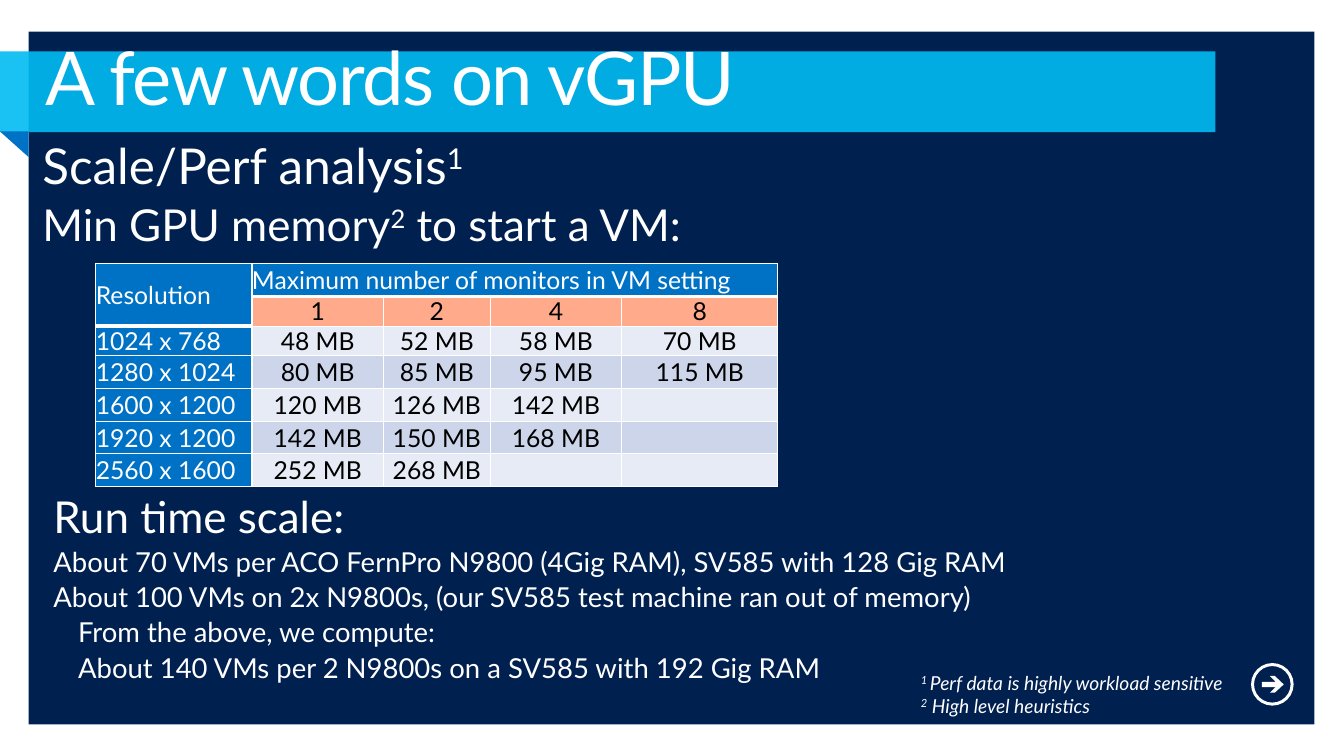
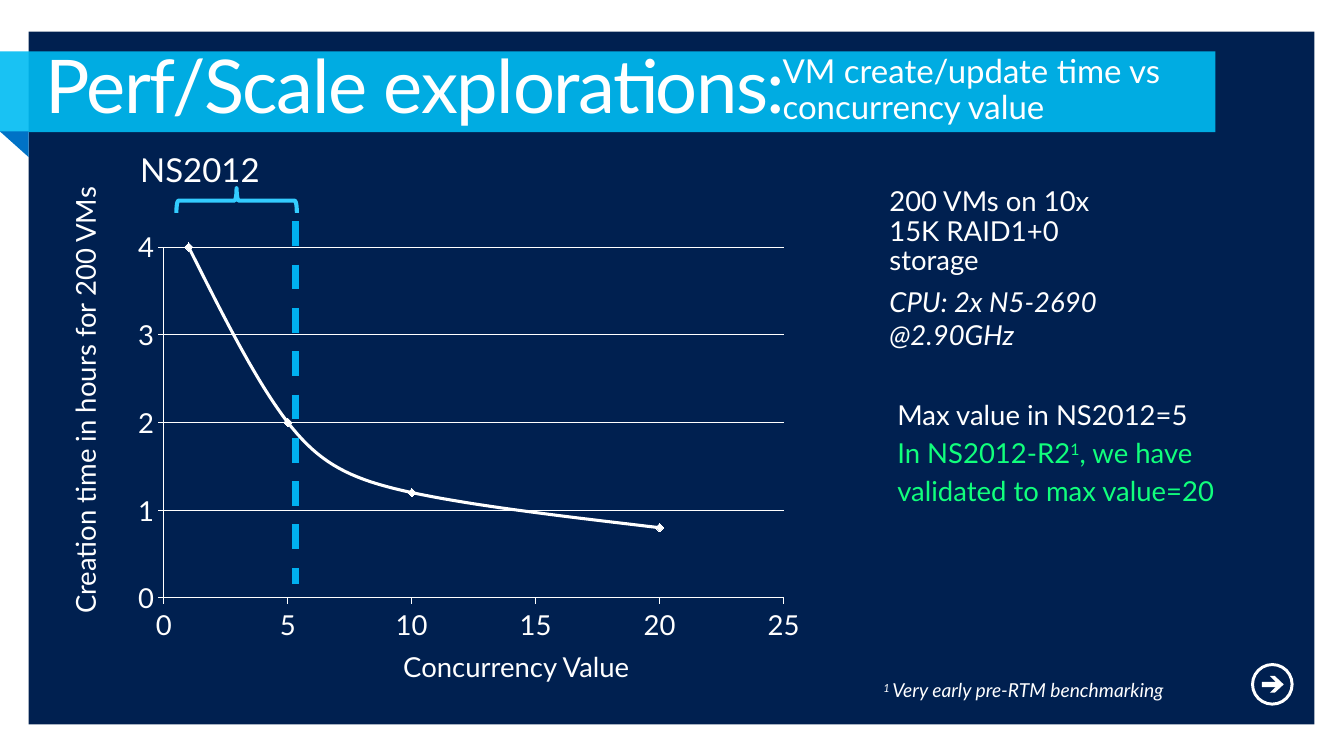
from dataclasses import dataclass

from lxml import etree
from pptx import Presentation
from pptx import util as u
from pptx.chart import data as chart_data
from pptx.dml.color import RGBColor
from pptx.enum import chart as charts, dml, shapes, text
from pptx.oxml import ns, parse_xml

Pt = u.Pt
KIND = shapes.MSO_SHAPE
MAIN = ns.nsdecls("a")


@dataclass(frozen=True)
class Theme:
    font: str = "Lato"
    navy: str = "002050"
    white: str = "FFFFFF"
    black: str = "000000"
    band: str = "00BCF2"
    blue: str = "0072C6"
    salmon: str = "FFAB8B"
    stripes: tuple = ("E7EBF5", "CCD5EA")
    dash: str = "00B0F0"
    brace: str = "33CCFF"
    green: str = "11FF7C"
    title: float = 54
    lead: float = 36
    head: float = 32
    label: float = 24
    body: float = 20
    cell: float = 18
    note: float = 14


THEME = Theme()
BODY_INSETS = (11.5, 7.2)
LABEL_INSETS = (14.4, 11.5)
NOTE_INSETS = (7.2, 3.6)
LABEL = {"line_spacing": 0.9, "space_after": Pt(6)}


def bullet(size):
    return {"line_spacing": 0.9, "space_before": Pt(size * 0.2)}


def apply(target, values):
    for name, value in values.items():
        setattr(target, name, value)


def rgb(color):
    return RGBColor.from_string(color)


class Deck:
    def __init__(self, theme):
        self.theme = theme
        self.presentation = Presentation()
        apply(self.presentation, {"slide_width": Pt(979.2), "slide_height": Pt(550.8)})
        self.slide = None

    def add_slide(self, title, title_top):
        theme = self.theme
        self.slide = self.presentation.slides.add_slide(self.presentation.slide_layouts[6])
        background = self.slide.background.fill
        background.solid()
        background.fore_color.rgb = rgb(theme.navy)
        frame = self.shape(KIND.FRAME, (0, 0, 979.2, 550.8), theme.white)
        frame.adjustments[0] = 0.038
        for box in ((18.7, 527.8, 949.7, 7.9), (14.4, 15.1, 949.7, 7.9), (957.6, 15.1, 6.5, 520.6)):
            self.shape(KIND.RECTANGLE, box, theme.white)
        band = self.shape(KIND.RECTANGLE, (0, 37.4, 885.6, 59), theme.band)
        color = band._element.spPr.find(".//" + ns.qn("a:srgbClr"))
        etree.SubElement(color, ns.qn("a:alpha"), val="90000")
        self.shape(KIND.RIGHT_TRIANGLE, (0, 95.8, 20.9, 18.7), theme.blue, rotation=180)
        self.next_icon()
        runs = self.text((21.6, title_top, 936, 72), [(title, {"line_spacing": 0.9})],
                         theme.title, BODY_INSETS)
        runs[0]._r.get_or_add_rPr().set("spc", "-100")

    def next_icon(self):
        ring = self.shape(KIND.DONUT, (911.5, 483.1, 31, 31), self.theme.white)
        ring.adjustments[0] = 0.07
        points = [(929.5, 496.8), (925.2, 492.5), (928.8, 492.5), (935.3, 498.7), (928.8, 504.7),
                  (925.2, 504.7), (929.5, 500.6), (919.4, 500.6), (919.4, 496.8)]
        corners = [(Pt(x), Pt(y)) for x, y in points]
        builder = self.slide.shapes.build_freeform(*corners[0])
        builder.add_line_segments(corners[1:], close=True)
        self.paint(builder.convert_to_shape(), self.theme.white)

    def paint(self, shape, fill=None, line=None, width=0):
        shape.shadow.inherit = False
        if fill:
            shape.fill.solid()
            shape.fill.fore_color.rgb = rgb(fill)
        else:
            shape.fill.background()
        if line:
            self.stroke(shape.line, line, width)
        else:
            shape.line.fill.background()

    def stroke(self, line, color, width):
        line.color.rgb = rgb(color)
        line.width = Pt(width)

    def shape(self, kind, box, fill=None, line=None, width=0, rotation=0):
        shape = self.slide.shapes.add_shape(kind, *map(Pt, box))
        shape.rotation = rotation
        self.paint(shape, fill, line, width)
        return shape

    def dashed_line(self, start, end, color, width):
        line = self.slide.shapes.add_connector(
            shapes.MSO_CONNECTOR.STRAIGHT, *map(Pt, start + end))
        self.stroke(line.line, color, width)
        line.line.dash_style = dml.MSO_LINE.DASH
        etree.SubElement(line._element.spPr, ns.qn("a:effectLst"))

    def add_runs(self, paragraph, content, size, color=None, italic=False):
        runs = []
        for index, part in enumerate(content.split("^")):
            if not part:
                continue
            run = paragraph.add_run()
            run.text = part
            apply(run.font, {"name": self.theme.font, "size": Pt(size), "italic": italic})
            run.font.color.rgb = rgb(color or self.theme.white)
            if index % 2:
                run._r.get_or_add_rPr().set("baseline", "30000")
            runs.append(run)
        return runs

    def text(self, box, lines, size, insets, rotation=0):
        shape = self.slide.shapes.add_textbox(*map(Pt, box))
        shape.rotation = rotation
        frame = shape.text_frame
        side, edge = map(Pt, insets)
        apply(frame, {"word_wrap": True, "margin_left": side, "margin_right": side,
                      "margin_top": edge, "margin_bottom": edge,
                      "vertical_anchor": text.MSO_ANCHOR.TOP})
        runs = []
        for index, (content, spacing, *rest) in enumerate(lines):
            style = {"size": size, **(rest[0] if rest else {})}
            paragraph = frame.add_paragraph() if index else frame.paragraphs[0]
            apply(paragraph, spacing)
            indent = style.pop("indent", 0)
            if indent:
                paragraph._p.get_or_add_pPr().set("marL", str(Pt(indent)))
            runs += self.add_runs(paragraph, content, **style)
        return runs

    def label(self, box, content, size, rotation=0):
        self.text(box, [(content, LABEL)], size, LABEL_INSETS, rotation)

    def footnote(self, box, *notes):
        lines = [(note, {}, {"italic": True}) for note in notes]
        self.text(box, lines, self.theme.note, NOTE_INSETS)

    def cell_borders(self, cell, thick):
        properties = cell._tc.get_or_add_tcPr()
        for index, side in enumerate("LRTB"):
            width = Pt(3 if side in thick else 1)
            properties.insert(index, parse_xml(
                f'<a:ln{side} {MAIN} w="{width}"><a:solidFill>'
                f'<a:srgbClr val="{self.theme.white}"/></a:solidFill></a:ln{side}>'))

    def memory_table(self, corner, columns, heights, rows):
        theme = self.theme
        table = self.slide.shapes.add_table(
            len(rows), len(columns), *map(Pt, corner + (sum(columns), sum(heights)))).table
        for column, width in zip(table.columns, columns):
            column.width = Pt(width)
        for row, height in zip(table.rows, heights):
            row.height = Pt(height)
        for r, values in enumerate(rows):
            for c, value in enumerate(values):
                cell = table.cell(r, c)
                header = r == 0 or c == 0
                fill = theme.blue if header else theme.salmon if r == 1 else theme.stripes[r % 2]
                cell.fill.solid()
                cell.fill.fore_color.rgb = rgb(fill)
                apply(cell, {"margin_left": 0, "margin_right": 0, "margin_top": 0,
                             "margin_bottom": 0, "vertical_anchor": text.MSO_ANCHOR.MIDDLE})
                paragraph = cell.text_frame.paragraphs[0]
                paragraph.font.size = Pt(theme.cell)
                paragraph.alignment = text.PP_ALIGN.LEFT if header else text.PP_ALIGN.CENTER
                self.add_runs(paragraph, value, theme.cell, theme.white if header else theme.black)
                last_header_row = 1 if c == 0 else 0
                thick = "B" if r <= last_header_row else "T" if r == last_header_row + 1 else ""
                self.cell_borders(cell, thick)
        table.cell(0, 0).merge(table.cell(1, 0))
        table.cell(0, 1).merge(table.cell(0, len(columns) - 1))

    def scatter(self, box, points, plot):
        theme = self.theme
        data = chart_data.XyChartData()
        entries = data.add_series("Series 1")
        for point in points:
            entries.add_data_point(*point)
        chart = self.slide.shapes.add_chart(
            charts.XL_CHART_TYPE.XY_SCATTER_SMOOTH, *map(Pt, box), data).chart
        apply(chart, {"has_legend": False, "has_title": False})
        apply(chart.font, {"name": theme.font, "size": Pt(theme.body)})
        chart.font.color.rgb = rgb(theme.white)
        chart.plots[0].vary_by_categories = False
        for axis, top, step, grid in ((chart.category_axis, 25, 5, False),
                                      (chart.value_axis, 4, 1, True)):
            apply(axis, {"minimum_scale": 0, "maximum_scale": top, "major_unit": step,
                         "has_major_gridlines": grid, "has_title": False,
                         "major_tick_mark": charts.XL_TICK_MARK.OUTSIDE})
            apply(axis.tick_labels, {"number_format": "General", "number_format_is_linked": False})
            self.stroke(axis.format.line, theme.white, 0.75)
        self.stroke(chart.value_axis.major_gridlines.format.line, theme.white, 0.75)
        series = chart.plots[0].series[0]
        series._element.get_or_add_smooth().val = True
        self.stroke(series.format.line, theme.white, 2.25)
        apply(series.marker, {"style": charts.XL_MARKER_STYLE.DIAMOND, "size": 6})
        series.marker.format.fill.solid()
        series.marker.format.fill.fore_color.rgb = rgb(theme.white)
        self.stroke(series.marker.format.line, theme.white, 0.75)
        area = chart._chartSpace.chart.plotArea
        for old in area.findall(ns.qn("c:layout")):
            area.remove(old)
        values = {"layoutTarget": "inner", "xMode": "edge", "yMode": "edge",
                  **dict(zip("xywh", plot))}
        layout = "".join(f'<c:{name} val="{value}"/>' for name, value in values.items())
        area.insert(0, parse_xml(f'<c:layout {ns.nsdecls("c")}><c:manualLayout>{layout}'
                                 '</c:manualLayout></c:layout>'))


def memory_slide(deck):
    theme = deck.theme
    deck.add_slide("A few words on vGPU", 23)
    deck.text((19.4, 95.8, 908.6, 96.5), [
        ("Scale/Perf analysis^1^", bullet(theme.lead), {"size": theme.lead}),
        ("Min GPU memory^2^ to start a VM:", bullet(theme.head)),
    ], theme.head, BODY_INSETS)
    deck.memory_table((69.8, 192.2), (113.8, 95.8, 77.8, 95.8, 113.8),
                      [23.8, 21.6, 21.6] + [23.8] * 4, [
        ("Resolution", "Maximum number of monitors in VM setting", "", "", ""),
        ("", "1", "2", "4", "8"),
        ("1024 x 768", "48 MB", "52 MB", "58 MB", "70 MB"),
        ("1280 x 1024", "80 MB", "85 MB", "95 MB", "115 MB"),
        ("1600 x 1200", "120 MB", "126 MB", "142 MB", ""),
        ("1920 x 1200", "142 MB", "150 MB", "168 MB", ""),
        ("2560 x 1600", "252 MB", "268 MB", "", ""),
    ])
    deck.footnote((663.8, 485.3, 248.4, 41), "^1 ^Perf data is highly workload sensitive",
                  "^2^ High level heuristics")
    detail = bullet(theme.body)
    deck.text((27.4, 354.2, 936, 156.2), [
        ("Run time scale:", bullet(theme.head), {"size": theme.head}),
        ("About 70 VMs per ACO FernPro N9800 (4Gig RAM), SV585 with 128 Gig RAM", detail),
        ("About 100 VMs on 2x N9800s, (our SV585 test machine ran out of memory)", detail),
        ("From the above, we compute:", detail, {"indent": 18}),
        ("About 140 VMs per 2 N9800s on a SV585 with 192 Gig RAM", detail, {"indent": 18}),
    ], theme.body, BODY_INSETS)


def concurrency_slide(deck):
    theme = deck.theme
    deck.add_slide("Perf/Scale explorations:", 28.8)
    deck.scatter((89.3, 161.3, 501.8, 311.8), [(1, 4), (5, 2), (10, 1.2), (20, 0.8)],
                 (0.06, 0.06, 0.9, 0.82))
    deck.label((279.4, 465.8, 264.2, 45.4), "Concurrency Value", theme.body)
    deck.label((-113, 261.4, 355, 45.4), "Creation time in hours for 200 VMs", theme.body, 270)
    deck.text((633.6, 125.3, 203.8, 143.3), [
        ("200 VMs on 10x 15K RAID1+0 storage", LABEL),
        ("CPU: 2x N5-2690", {}, {"italic": True}),
        ("@2.90GHz", {}, {"italic": True}),
    ], theme.body, LABEL_INSETS)
    deck.dashed_line((215.3, 161.3), (215.3, 425.5), theme.dash, 4.5)
    deck.label((87.8, 100.8, 131.8, 49.7), "NS2012", theme.label)
    deck.shape(KIND.RIGHT_BRACE, (163.4, 102.2, 18, 87.8), line=theme.brace, width=3, rotation=270)
    deck.text((639.4, 281.5, 263.5, 100.8), [
        ("Max value in NS2012=5", LABEL),
        ("In NS2012-R2^1^, we have", LABEL, {"color": theme.green}),
        ("validated to max value=20", LABEL, {"color": theme.green}),
    ], theme.body, LABEL_INSETS)
    deck.label((555.8, 28.8, 306, 75.6), "VM create/update time vs concurrency value", theme.label)
    deck.footnote((636.5, 491, 231.1, 24.5), "^1 ^Very early pre-RTM benchmarking")


def main():
    deck = Deck(THEME)
    memory_slide(deck)
    concurrency_slide(deck)
    deck.presentation.save("out.pptx")


if __name__ == "__main__":
    main()
